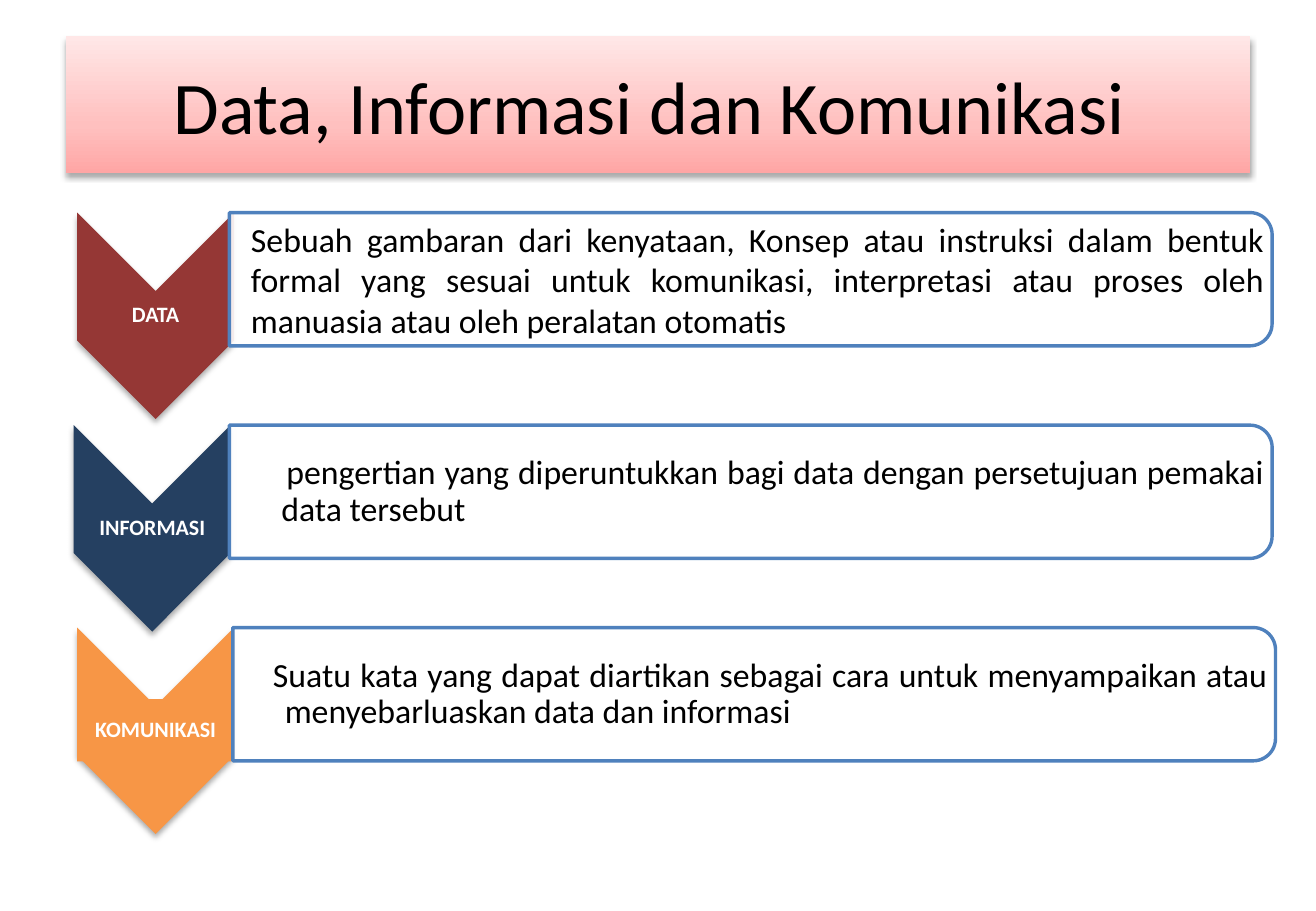
from lxml import etree
from pptx import Presentation
from pptx.dml.color import RGBColor
from pptx.enum.shapes import MSO_SHAPE
from pptx.enum.text import MSO_ANCHOR, PP_ALIGN
from pptx.oxml import parse_xml
from pptx.oxml.ns import nsdecls, qn
from pptx.util import Pt

RECTANGLE = MSO_SHAPE.RECTANGLE
CHEVRON = MSO_SHAPE.CHEVRON
ROUNDED_TOP = MSO_SHAPE.ROUND_2_SAME_RECTANGLE
MIDDLE = MSO_ANCHOR.MIDDLE
CENTER, JUSTIFY = PP_ALIGN.CENTER, PP_ALIGN.JUSTIFY

BLACK = RGBColor(0, 0, 0)
WHITE = RGBColor(255, 255, 255)
RED = RGBColor(0x95, 0x37, 0x35)
NAVY = RGBColor(0x25, 0x40, 0x61)
ORANGE = RGBColor(0xF7, 0x96, 0x46)
BLUE = RGBColor(0x4F, 0x81, 0xBD)
# Gradient stops from bottom to top: percent, colour
TITLE_STOPS = [(0, RGBColor(0xFF, 0xA6, 0xA5)), (35, RGBColor(0xFF, 0xC0, 0xBF)),
               (100, RGBColor(0xFF, 0xE7, 0xE7))]

CHEVRON_LENGTH, CHEVRON_WIDTH = 122.4, 93
PANEL_WIDTH, PANEL_HEIGHT = 618, 79
LABEL_HEIGHT = 37

# Top, chevron centre, panel left, colour, label, label fill,
# description, left margin, first-line indent, line spacing
TERMS = [
    (126, 92.2, 136, RED, "DATA", None,
     "Sebuah gambaran dari kenyataan, Konsep atau instruksi dalam bentuk formal "
     "yang sesuai untuk komunikasi, interpretasi atau proses oleh manuasia atau "
     "oleh peralatan otomatis", 0, 0, 1.0),
    (252, 90.2, 136, NAVY, "INFORMASI", None,
     "pengertian yang diperuntukkan bagi data dengan persetujuan pemakai data "
     "tersebut", 18, 3, 0.9),
    (372, 92.2, 138, ORANGE, "KOMUNIKASI", ORANGE,
     "Suatu kata yang dapat diartikan sebagai cara untuk menyampaikan atau "
     "menyebarluaskan data dan informasi", 18, -7, 0.9),
]


def add_shadow(shape):
    shape._element.spPr.append(parse_xml(
        f'<a:effectLst {nsdecls("a")}><a:outerShdw blurRad="{Pt(3.5)}" dist="{Pt(2.2)}" '
        'dir="5400000" rotWithShape="0"><a:srgbClr val="000000"><a:alpha val="32000"/>'
        '</a:srgbClr></a:outerShdw></a:effectLst>'))


def add_upright(slide, kind, center_x, top, width, height):
    """Add a shape turned by 90 degrees that covers width by height on the slide."""
    shape = slide.shapes.add_shape(
        kind, Pt(center_x - height / 2), Pt(top + (height - width) / 2),
        Pt(height), Pt(width))
    shape.rotation = 90
    shape.shadow.inherit = False
    return shape


def write(shape, text, size, color, align, insets, bold=False):
    frame = shape.text_frame
    frame.word_wrap = True
    frame.vertical_anchor = MIDDLE
    (frame.margin_left, frame.margin_top,
     frame.margin_right, frame.margin_bottom) = map(Pt, insets)
    paragraph = frame.paragraphs[0]
    paragraph.text = text
    paragraph.alignment = align
    paragraph.font.name = "Calibri"
    paragraph.font.size = Pt(size)
    paragraph.font.bold = bold
    paragraph.font.color.rgb = color
    return paragraph


def add_title(slide):
    title = slide.shapes.add_shape(RECTANGLE, Pt(39), Pt(21.6), Pt(702), Pt(81))
    title.line.fill.background()
    title.fill.gradient()
    title.fill.gradient_angle = 90
    stop_list = title._element.spPr.find(qn("a:gradFill")).find(qn("a:gsLst"))
    for old_stop in list(stop_list):
        stop_list.remove(old_stop)
    for percent, color in TITLE_STOPS:
        stop = etree.SubElement(stop_list, qn("a:gs"), pos=str(percent * 1000))
        etree.SubElement(stop, qn("a:srgbClr"), val=str(color))
    add_shadow(title)
    write(title, "Data, Informasi dan Komunikasi ", 44, BLACK, CENTER, (7.2, 3.6, 7.2, 3.6))


def add_chevron(slide, center_x, top, color):
    chevron = add_upright(slide, CHEVRON, center_x, top, CHEVRON_WIDTH, CHEVRON_LENGTH)
    chevron.fill.solid()
    chevron.fill.fore_color.rgb = color
    chevron.line.fill.background()
    chevron._element.spPr.remove(chevron._element.spPr.find(qn("a:effectLst")))
    add_shadow(chevron)


def add_label(slide, center_x, top, text, fill):
    label = slide.shapes.add_textbox(
        Pt(center_x - CHEVRON_WIDTH / 2), Pt(top + 42.4), Pt(CHEVRON_WIDTH), Pt(LABEL_HEIGHT))
    if fill is not None:
        label.fill.solid()
        label.fill.fore_color.rgb = fill
    paragraph = write(label, text, 13, WHITE, CENTER, (0.7,) * 4, bold=True)
    paragraph.line_spacing = 0.9


def add_panel(slide, left, top):
    panel = add_upright(slide, ROUNDED_TOP, left + PANEL_WIDTH / 2, top,
                        PANEL_WIDTH, PANEL_HEIGHT)
    panel.fill.solid()
    panel.fill.fore_color.rgb = WHITE
    fill_color = panel._element.spPr.find(qn("a:solidFill"))[0]
    etree.SubElement(fill_color, qn("a:alpha"), val="90000")
    panel.line.color.rgb = BLUE
    panel.line.width = Pt(2)


def add_description(slide, left, top, text, margin, indent, spacing):
    description = slide.shapes.add_textbox(Pt(left + 0.6), Pt(top + 3.6), Pt(614.2), Pt(72))
    paragraph = write(description, text, 20, BLACK, JUSTIFY, (12.2, 1.4, 1.4, 1.4))
    paragraph.line_spacing = spacing
    properties = paragraph._p.get_or_add_pPr()
    properties.set("marL", str(Pt(margin)))
    properties.set("indent", str(Pt(indent)))


def main():
    presentation = Presentation()
    presentation.slide_width, presentation.slide_height = Pt(780), Pt(540)
    slide = presentation.slides.add_slide(presentation.slide_layouts[6])

    add_title(slide)
    # One row per term: chevron with label, then panel with description
    for (top, center_x, left, color, label, label_fill,
         text, margin, indent, spacing) in TERMS:
        add_chevron(slide, center_x, top, color)
        add_label(slide, center_x, top, label, label_fill)
        add_panel(slide, left, top)
        add_description(slide, left, top, text, margin, indent, spacing)

    presentation.save("out.pptx")


if __name__ == "__main__":
    main()
